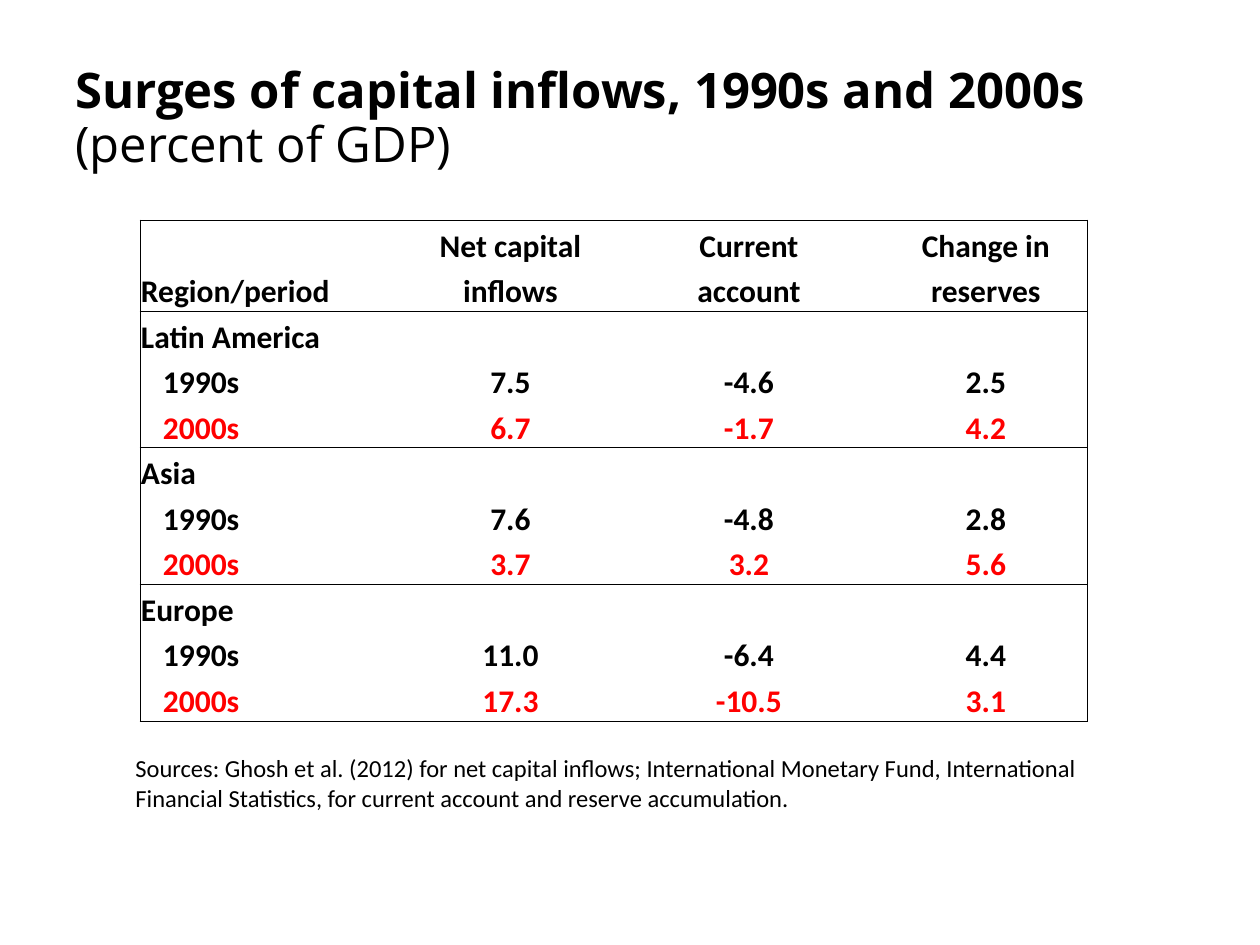
from lxml.etree import SubElement
from pptx import Presentation
from pptx.dml.color import RGBColor
from pptx.enum.text import MSO_ANCHOR as Anchor, PP_ALIGN as Align
from pptx.oxml.ns import qn
from pptx.util import Pt

BLACK = RGBColor(0x00, 0x00, 0x00)
RED = RGBColor(0xFF, 0x00, 0x00)
HEADING_FONT, BODY_FONT = "Open Sans", "Calibri"

HEADINGS = [
    ("", "Net capital", "Current", "Change in"),
    ("Region/period", "inflows", "account", "reserves"),
]
REGIONS = {
    "Latin America": [("1990s", "7.5", "-4.6", "2.5"), ("2000s", "6.7", "-1.7", "4.2")],
    "Asia": [("1990s", "7.6", "-4.8", "2.8"), ("2000s", "3.7", "3.2", "5.6")],
    "Europe": [("1990s", "11.0", "-6.4", "4.4"), ("2000s", "17.3", "-10.5", "3.1")],
}
COLUMN_WIDTHS = (267, 207, 270, 204)


def px(length):
    """Turn pixels at 126 to the inch into EMU."""
    return round(length * 914400 / 126)


class SlideBuilder:
    """Holds the current slide and its style and adds elements to it."""

    def __init__(self, slide):
        self.slide = slide
        self.rule_width = Pt(0.5)
        self.table_size = Pt(18)

    def set_font(self, font, name, size, color=BLACK, bold=False):
        """Apply one typeface, size, colour and weight."""
        font.name, font.size, font.bold = name, size, bold
        font.color.rgb = color

    def text_box(self, left, top, width, height, anchor=Anchor.TOP):
        """Add a wrapping text box and return its first paragraph."""
        frame = self.slide.shapes.add_textbox(px(left), px(top), px(width), px(height)).text_frame
        frame.word_wrap = True
        frame.vertical_anchor = anchor
        return frame.paragraphs[0]

    def title(self, left, top, width, height, parts):
        """Add the title from (text, points, bold) parts."""
        paragraph = self.text_box(left, top, width, height, Anchor.MIDDLE)
        paragraph.line_spacing = 0.9
        for text, points, bold in parts:
            run = paragraph.add_run()
            run.text = text
            self.set_font(run.font, HEADING_FONT, Pt(points), bold=bold)

    def note(self, left, top, width, height, text):
        """Add a plain source note."""
        paragraph = self.text_box(left, top, width, height)
        paragraph.text = text
        self.set_font(paragraph.font, BODY_FONT, Pt(14))

    def borders(self, cell, drawn):
        """Rule the drawn sides of a cell and clear the others."""
        properties = cell._tc.get_or_add_tcPr()
        for side in "LRTB":
            line = SubElement(properties, qn(f"a:ln{side}"), w=str(self.rule_width))
            if side in drawn:
                fill = SubElement(line, qn("a:solidFill"))
                SubElement(fill, qn("a:srgbClr"), val=str(BLACK))
            else:
                SubElement(line, qn("a:noFill"))

    def cell(self, cell, text, color, align, indent, drawn):
        """Fill in one table cell."""
        self.borders(cell, drawn)
        cell.fill.background()
        cell.vertical_anchor = Anchor.BOTTOM
        cell.margin_left = px(1 + indent)
        cell.margin_right = cell.margin_top = px(1)
        cell.margin_bottom = 0
        paragraph = cell.text_frame.paragraphs[0]
        paragraph.text = text
        paragraph.alignment = align
        self.set_font(paragraph.font, BODY_FONT, self.table_size, color, bold=True)

    def table(self, left, top, height, widths, rows, group_starts):
        """Add a table with a rule round each group of rows."""
        table = self.slide.shapes.add_table(
            len(rows), len(widths), px(left), px(top), px(sum(widths)), px(height)
        ).table
        table.first_row = table.horz_banding = False
        for column, width in zip(table.columns, widths):
            column.width = px(width)
        last = len(widths) - 1
        for r, row in enumerate(rows):
            color = RED if row[0] == "2000s" else BLACK
            rules = ("T" if r in group_starts else "") + (
                "B" if r + 1 in group_starts or r + 1 == len(rows) else ""
            )
            for c, text in enumerate(row):
                drawn = rules + ("L" if c == 0 else "") + ("R" if c == last else "")
                align = Align.CENTER if c else Align.LEFT
                indent = 22 if c == 0 and text.endswith("0s") else 0
                self.cell(table.cell(r, c), text, color, align, indent, drawn)


def main():
    """Build the capital inflows slide."""
    deck = Presentation()
    deck.slide_width, deck.slide_height = px(1260), px(945)
    builder = SlideBuilder(deck.slides.add_slide(deck.slide_layouts[6]))

    builder.title(63, 38, 1134, 157, [
        ("Surges of capital inflows, 1990s and 2000s", 28, True),
        (" ", 32, False),
        ("(percent of GDP)", 28, False),
    ])

    rows, group_starts = list(HEADINGS), [0]
    for region, periods in REGIONS.items():
        group_starts.append(len(rows))
        rows += [(region, "", "", ""), *periods]
    builder.table(140, 220, 501, COLUMN_WIDTHS, rows, group_starts)

    builder.note(
        123, 747, 995, 72,
        "Sources: Ghosh et al. (2012) for net capital inflows; International Monetary Fund, "
        "International Financial Statistics, for current account and reserve accumulation.",
    )
    deck.save("out.pptx")


if __name__ == "__main__":
    main()
